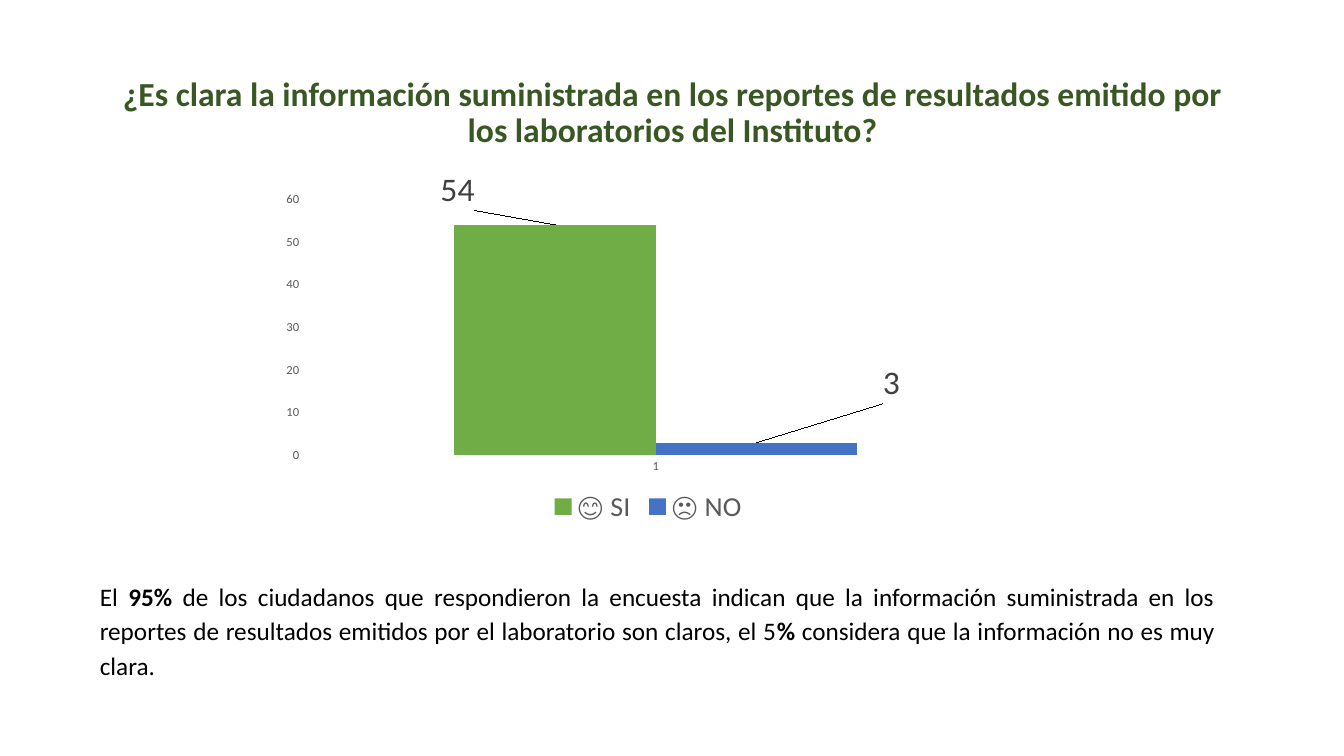
"""Builds the survey slide on how clear the laboratory reports are."""
from pptx import Presentation
from pptx.chart.data import CategoryChartData
from pptx.dml.color import RGBColor
from pptx.enum.chart import XL_CHART_TYPE as ChartType
from pptx.enum.chart import XL_LABEL_POSITION as LabelPosition
from pptx.enum.chart import XL_LEGEND_POSITION as LegendPosition
from pptx.enum.chart import XL_TICK_MARK as TickMark
from pptx.enum.text import MSO_ANCHOR as Anchor
from pptx.enum.text import PP_ALIGN as Align
from pptx.oxml import parse_xml
from pptx.oxml.ns import nsdecls, qn
from pptx.util import Inches, Pt

DARK_GREEN = RGBColor(0x38, 0x57, 0x23)
GREEN = RGBColor(0x70, 0xAD, 0x47)
BLUE = RGBColor(0x44, 0x72, 0xC4)
BLACK = RGBColor(0, 0, 0)
GREY = RGBColor(0x59, 0x59, 0x59)
DARK_GREY = RGBColor(0x40, 0x40, 0x40)
FONT = "Calibri"

QUESTION = ("¿Es clara la información suministrada en los reportes de resultados "
            "emitido por los laboratorios del Instituto?")
ANSWERS = [
    ("😊 SI", 54, GREEN, {"x": -0.13, "y": -0.03}),
    ("🙁 NO", 3, BLUE, {"x": 0.18, "y": -0.1}),
]
PLOT_AREA = {"x": 0.04, "y": 0.06, "w": 0.94, "h": 0.73}
CONCLUSION = [
    ("El ", False),
    ("95% ", True),
    ("de los ciudadanos que respondieron la encuesta indican que la información "
     "suministrada en los reportes de resultados emitidos por el laboratorio son "
     "claros, el 5", False),
    ("% ", True),
    ("considera que la información no es muy clara.", False),
]


def style(font, size, color, bold=False):
    font.name, font.size, font.bold = FONT, Pt(size), bold
    font.color.rgb = color


def place(shape, left, top, width, height):
    shape.left, shape.top = Inches(left), Inches(top)
    shape.width, shape.height = Inches(width), Inches(height)


def make_layout(places, inner=False):
    target = '<c:layoutTarget val="inner"/>' if inner else ""
    modes = '<c:xMode val="edge"/><c:yMode val="edge"/>' if inner else ""
    values = "".join(f'<c:{key} val="{value}"/>' for key, value in places.items())
    return parse_xml(f'<c:layout {nsdecls("c")}><c:manualLayout>{target}{modes}'
                     f'{values}</c:manualLayout></c:layout>')


def add_title(page):
    title = page.shapes.title
    place(title, 0.92, 0.4, 11.5, 1.45)
    title.text_frame.vertical_anchor = Anchor.MIDDLE
    para = title.text_frame.paragraphs[0]
    para.alignment, para.line_spacing = Align.CENTER, 0.9
    span = para.add_run()
    span.text = QUESTION
    style(span.font, 24, DARK_GREEN, True)


def add_answers_chart(page):
    data = CategoryChartData()
    data.categories = ["1"]
    for name, count, _, _ in ANSWERS:
        data.add_series(name, [count])
    chart = page.shapes.add_chart(ChartType.COLUMN_CLUSTERED, Inches(2.71), Inches(1.69),
                                  Inches(7.44), Inches(3.56), data).chart
    style(chart.font, 10, BLACK)
    chart.has_title = False
    chart.has_legend = True
    chart.legend.position = LegendPosition.BOTTOM
    chart.legend.include_in_layout = False
    style(chart.legend.font, 20, GREY)

    for axis in (chart.category_axis, chart.value_axis):
        axis.major_tick_mark = axis.minor_tick_mark = TickMark.NONE
        axis.has_major_gridlines = False
        axis.format.line.fill.background()
        style(axis.tick_labels.font, 9, GREY)
    chart.value_axis.minimum_scale = 0
    chart.value_axis.maximum_scale = 60
    chart.value_axis.major_unit = 10

    plot = chart.plots[0]
    plot.gap_width, plot.overlap, plot.vary_by_categories = 150, 0, False
    for series, (_, _, color, _) in zip(plot.series, ANSWERS):
        series.format.fill.solid()
        series.format.fill.fore_color.rgb = color
        series.data_labels.show_value = True
        label = series.points[0].data_label
        for item in (series.data_labels, label):
            style(item.font, 24, DARK_GREY)
            item.position = LabelPosition.OUTSIDE_END

    labels = chart.element.iter(qn("c:dLbl"))
    for label, (_, _, _, offset) in zip(labels, ANSWERS):
        label.find(qn("c:idx")).addnext(make_layout(offset))
    area = next(chart.element.iter(qn("c:plotArea")))
    for automatic in area.findall(qn("c:layout")):
        area.remove(automatic)
    area.insert(0, make_layout(PLOT_AREA, inner=True))


def add_conclusion(page):
    box = page.shapes.add_textbox(Inches(0.14), Inches(5.67), Inches(13), Inches(1.15))
    frame = box.text_frame
    frame.word_wrap = True
    frame.margin_left, frame.margin_right = Inches(0.85), Inches(1.09)
    para = frame.paragraphs[0]
    para.alignment, para.line_spacing = Align.JUSTIFY, 1.15
    for text, bold in CONCLUSION:
        span = para.add_run()
        span.text = text
        style(span.font, 18, BLACK, bold)


def main():
    deck = Presentation()
    deck.slide_width, deck.slide_height = Inches(13.33), Inches(7.5)
    page = deck.slides.add_slide(deck.slide_layouts[5])
    add_conclusion(page)
    add_title(page)
    add_answers_chart(page)
    deck.save("out.pptx")


if __name__ == "__main__":
    main()
